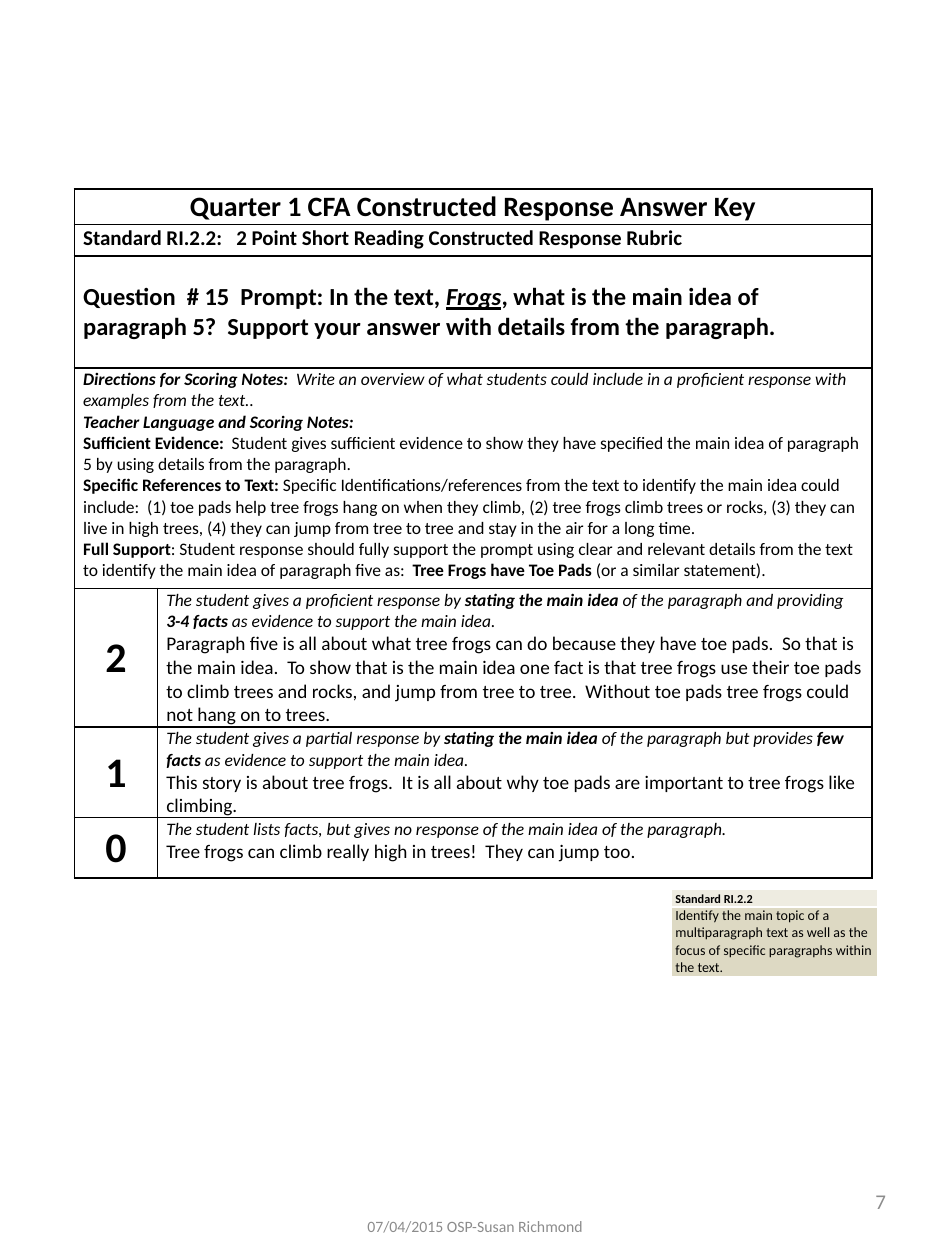
from dataclasses import dataclass

from lxml import etree
from pptx import Presentation
from pptx.dml.color import RGBColor
from pptx.enum.text import MSO_ANCHOR, PP_ALIGN
from pptx.oxml.ns import qn
from pptx.util import Inches, Pt

LEFT, CENTER, RIGHT = PP_ALIGN.LEFT, PP_ALIGN.CENTER, PP_ALIGN.RIGHT
TOP, MIDDLE = MSO_ANCHOR.TOP, MSO_ANCHOR.MIDDLE
BLANK_LAYOUT = 6


@dataclass(frozen=True)
class Theme:
    font: str = "Calibri"
    ink: str = "000000"
    muted: str = "8C8C8C"
    paper: str = "FFFFFF"
    standard_head: str = "EEECE1"
    standard_body: str = "DDD9C3"
    heading: int = 16
    subheading: int = 12
    prompt: int = 14
    notes: int = 10
    sample: int = 11
    score: int = 24
    page: int = 12
    footer: int = 9
    standard_title: int = 7
    standard_text: int = 8


THEME = Theme()

# Each paragraph is a list of (text, style) runs; style letters are b, i and u.
PROMPT = [
    ("Question  # 15  Prompt: In the text, ", "b"),
    ("Frogs", "biu"),
    (", what is the main idea of paragraph 5?  Support your answer with "
     "details from the paragraph.", "b"),
]
SCORING_NOTES = [
    [("Directions for Scoring Notes:  ", "bi"),
     ("Write an overview of what students could include in a proficient "
      "response with examples from the text..", "i")],
    [("Teacher Language and Scoring Notes:", "bi")],
    [("Sufficient Evidence: ", "b"),
     (" Student gives sufficient evidence to show they have specified the "
      "main idea of paragraph 5 by using details from the paragraph.", "")],
    [("Specific References to Text: ", "b"),
     ("Specific Identifications/references from the text to identify the main "
      "idea could include:  (1) toe pads help tree frogs hang on when they "
      "climb, (2) tree frogs climb trees or rocks, (3) they can live in high "
      "trees, (4) they can jump from tree to tree and stay in the air for a "
      "long time.", "")],
    [("Full Support", "b"),
     (": Student response should fully support the prompt using clear and "
      "relevant details from the text", "")],
    [("to identify the main idea of paragraph five as:  ", ""),
     ("Tree Frogs have Toe Pads ", "b"),
     ("(or a similar statement).", "")],
]
# Score, criteria paragraphs, sample answer
SCORES = [
    ("2",
     [[("The student gives a proficient response by ", "i"),
       ("stating the main idea ", "bi"),
       ("of the paragraph and providing", "i")],
      [("3-4 facts ", "bi"), ("as evidence to support the main idea.", "i")]],
     "Paragraph five is all about what tree frogs can do because they have toe "
     "pads.  So that is the main idea.  To show that is the main idea one fact "
     "is that tree frogs use their toe pads to climb trees and rocks, and jump "
     "from tree to tree.  Without toe pads tree frogs could not hang on to trees."),
    ("1",
     [[("The student gives a partial response by ", "i"),
       ("stating the main idea ", "bi"),
       ("of the paragraph but provides ", "i"),
       ("few facts ", "bi"),
       ("as evidence to support the main idea.", "i")]],
     "This story is about tree frogs.  It is all about why toe pads are "
     "important to tree frogs like climbing."),
    ("0",
     [[("The student lists facts, but gives no response of the main idea of "
        "the paragraph.", "i")]],
     "Tree frogs can climb really high in trees!  They can jump too."),
]


def write_paragraph(paragraph, runs, size, color=THEME.ink, align=LEFT):
    paragraph.alignment = align
    for text, style in runs:
        run = paragraph.add_run()
        run.text = text
        font = run.font
        font.name, font.size = THEME.font, Pt(size)
        font.color.rgb = RGBColor.from_string(color)
        font.bold, font.italic = "b" in style, "i" in style
        font.underline = "u" in style


def fill_cell(cell, paragraphs, align=LEFT, anchor=TOP):
    """Write (runs, size) paragraphs into a table cell."""
    cell.vertical_anchor = anchor
    frame = cell.text_frame
    for index, (runs, size) in enumerate(paragraphs):
        paragraph = frame.add_paragraph() if index else frame.paragraphs[0]
        write_paragraph(paragraph, runs, size, align=align)


def add_borders(cell):
    properties = cell._tc.get_or_add_tcPr()
    for side in ("lnL", "lnR", "lnT", "lnB"):
        line = etree.SubElement(properties, qn(f"a:{side}"), w=str(Pt(1)))
        fill = etree.SubElement(line, qn("a:solidFill"))
        etree.SubElement(fill, qn("a:srgbClr"), val=THEME.ink)


def add_grid(slide, left, top, widths, heights, margins, fills, bordered):
    """Add a plain table with one fill colour per row."""
    table = slide.shapes.add_table(
        len(heights), len(widths), Inches(left), Inches(top),
        Inches(sum(widths)), Inches(sum(heights))).table
    table.first_row = table.horz_banding = False
    for column, width in zip(table.columns, widths):
        column.width = Inches(width)
    side, upper = margins
    for row, height, color in zip(table.rows, heights, fills):
        row.height = Inches(height)
        for cell in row.cells:
            if bordered:
                add_borders(cell)
            cell.fill.solid()
            cell.fill.fore_color.rgb = RGBColor.from_string(color)
            cell.margin_left = cell.margin_right = Inches(side)
            cell.margin_top, cell.margin_bottom = Inches(upper), 0
    return table


def add_label(slide, text, box, size, align):
    shape = slide.shapes.add_textbox(*map(Inches, box))
    frame = shape.text_frame
    frame.word_wrap = True
    frame.vertical_anchor = MIDDLE
    write_paragraph(frame.paragraphs[0], [(text, "")], size, THEME.muted, align)


def add_answer_key(slide):
    heights = [0.28, 0.25, 0.89, 1.75, 1.1, 0.72, 0.48]
    table = add_grid(slide, 0.59, 1.5, [0.66, 5.67], heights, (0.07, 0.01),
                     [THEME.paper] * len(heights), bordered=True)

    # Full-width rows
    full_rows = [
        ([([("Quarter 1 CFA Constructed Response Answer Key", "b")],
           THEME.heading)], CENTER, TOP),
        ([([("Standard RI.2.2:   2 Point Short Reading Constructed Response "
             "Rubric", "b")], THEME.subheading)], LEFT, TOP),
        ([(PROMPT, THEME.prompt)], LEFT, MIDDLE),
        ([(runs, THEME.notes) for runs in SCORING_NOTES], LEFT, TOP),
    ]
    for index, (paragraphs, align, anchor) in enumerate(full_rows):
        table.cell(index, 0).merge(table.cell(index, 1))
        fill_cell(table.cell(index, 0), paragraphs, align, anchor)

    # Score rows
    for index, (score, criteria, sample) in enumerate(SCORES, len(full_rows)):
        fill_cell(table.cell(index, 0), [([(score, "b")], THEME.score)],
                  CENTER, MIDDLE)
        paragraphs = [(runs, THEME.notes) for runs in criteria]
        paragraphs.append(([(sample, "")], THEME.sample))
        fill_cell(table.cell(index, 1), paragraphs)


def add_standard_note(slide):
    table = add_grid(slide, 5.33, 7.06, [1.64], [0.14, 0.55], (0.03, 0),
                     [THEME.standard_head, THEME.standard_body], bordered=False)
    head, body = table.cell(0, 0), table.cell(1, 0)
    fill_cell(head, [([("Standard RI.2.2", "b")], THEME.standard_title)],
              anchor=MIDDLE)
    head.text_frame.paragraphs[0].line_spacing = 1.15
    fill_cell(body, [([("Identify the main topic of a multiparagraph text as "
                        "well as the focus of specific paragraphs within the "
                        "text.", "")], THEME.standard_text)])


def main():
    presentation = Presentation()
    presentation.slide_width, presentation.slide_height = Inches(7.5), Inches(10)
    slide = presentation.slides.add_slide(
        presentation.slide_layouts[BLANK_LAYOUT])

    # Footer and page number
    add_label(slide, "07/04/2015 OSP-Susan Richmond", (2.58, 9.47, 2.38, 0.53),
              THEME.footer, CENTER)
    add_label(slide, "7", (5.38, 9.27, 1.75, 0.53), THEME.page, RIGHT)

    # Tables
    add_answer_key(slide)
    add_standard_note(slide)
    presentation.save("out.pptx")


if __name__ == "__main__":
    main()
